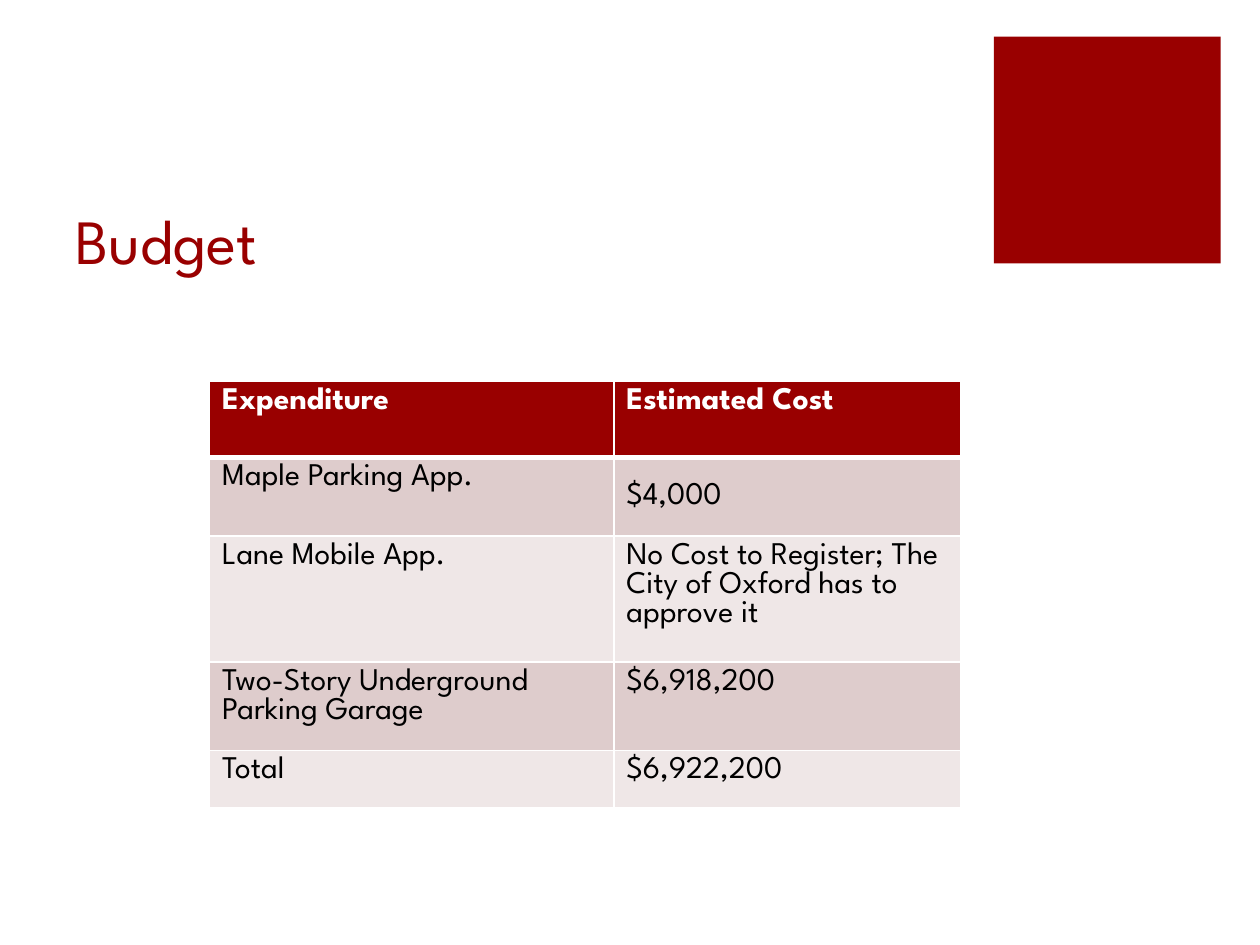
from dataclasses import dataclass

from lxml.etree import SubElement
from pptx import Presentation
from pptx.dml.color import RGBColor
from pptx.enum.shapes import MSO_SHAPE
from pptx.enum.text import MSO_ANCHOR
from pptx.oxml.ns import qn
from pptx.util import Pt


@dataclass(frozen=True)
class Theme:
    font: str = "League Spartan"
    accent: str = "990000"
    light: str = "FFFFFF"
    dark: str = "000000"
    bands: tuple = ("DECCCC", "EFE7E7")
    title_size: float = 36
    table_size: float = 18
    rule: float = 1
    header_rule: float = 3


class SlideBuilder:
    def __init__(self, slide, theme):
        self.slide = slide
        self.theme = theme

    def style(self, paragraph, size, color, bold=False):
        font = paragraph.font
        font.name = self.theme.font
        font.size = Pt(size)
        font.bold = bold
        font.color.rgb = RGBColor.from_string(color)

    def block(self, left, top, width, height):
        block = self.slide.shapes.add_shape(
            MSO_SHAPE.RECTANGLE, Pt(left), Pt(top), Pt(width), Pt(height))
        block.shadow.inherit = False
        block.fill.solid()
        block.fill.fore_color.rgb = RGBColor.from_string(self.theme.accent)
        block.line.fill.background()

    def title(self, text, left, top, width, height):
        frame = self.slide.shapes.add_textbox(
            Pt(left), Pt(top), Pt(width), Pt(height)).text_frame
        frame.word_wrap = True
        frame.vertical_anchor = MSO_ANCHOR.BOTTOM
        frame.text = text
        self.style(frame.paragraphs[0], self.theme.title_size, self.theme.accent)

    def borders(self, cell, top, bottom):
        properties = cell._tc.get_or_add_tcPr()
        rule = self.theme.rule
        for side, width in (("L", rule), ("R", rule), ("T", top), ("B", bottom)):
            line = SubElement(properties, qn(f"a:ln{side}"), w=str(Pt(width)))
            fill = SubElement(line, qn("a:solidFill"))
            SubElement(fill, qn("a:srgbClr"), val=self.theme.light)

    def cell(self, cell, text, row):
        theme = self.theme
        header = row == 0
        self.borders(cell,
                     top=theme.header_rule if row == 1 else theme.rule,
                     bottom=theme.header_rule if header else theme.rule)
        cell.fill.solid()
        cell.fill.fore_color.rgb = RGBColor.from_string(
            theme.accent if header else theme.bands[(row - 1) % 2])
        cell.text = text
        self.style(cell.text_frame.paragraphs[0], theme.table_size,
                   theme.light if header else theme.dark, bold=header)

    def table(self, rows, left, top, widths, heights):
        table = self.slide.shapes.add_table(
            len(rows), len(widths), Pt(left), Pt(top),
            Pt(sum(widths)), Pt(sum(heights))).table
        for column, width in zip(table.columns, widths):
            column.width = Pt(width)
        for index, (values, height) in enumerate(zip(rows, heights)):
            table.rows[index].height = Pt(height)
            for column, text in enumerate(values):
                self.cell(table.cell(index, column), text, index)
        return table


def main():
    presentation = Presentation()
    presentation.slide_width, presentation.slide_height = Pt(720), Pt(540)
    slide = presentation.slides.add_slide(presentation.slide_layouts[6])
    builder = SlideBuilder(slide, Theme())

    # Corner block and title
    builder.block(568, 21, 129.6, 129.6)
    builder.title("Budget", 36, 72, 512.6, 90)

    # Budget table
    expenses = [
        ("Expenditure", "Estimated Cost"),
        ("Maple Parking App.", "$4,000"),
        ("Lane Mobile App.", "No Cost to Register; The City of Oxford has to approve it"),
        ("Two-Story Underground Parking Garage", "$6,918,200"),
        ("Total", "$6,922,200"),
    ]
    budget = builder.table(expenses, 119.8, 217.8, widths=(231, 198),
                           heights=(43.6, 45, 50.4, 29.5, 33))
    budget.cell(1, 1).vertical_anchor = MSO_ANCHOR.MIDDLE

    presentation.save("out.pptx")


if __name__ == "__main__":
    main()
